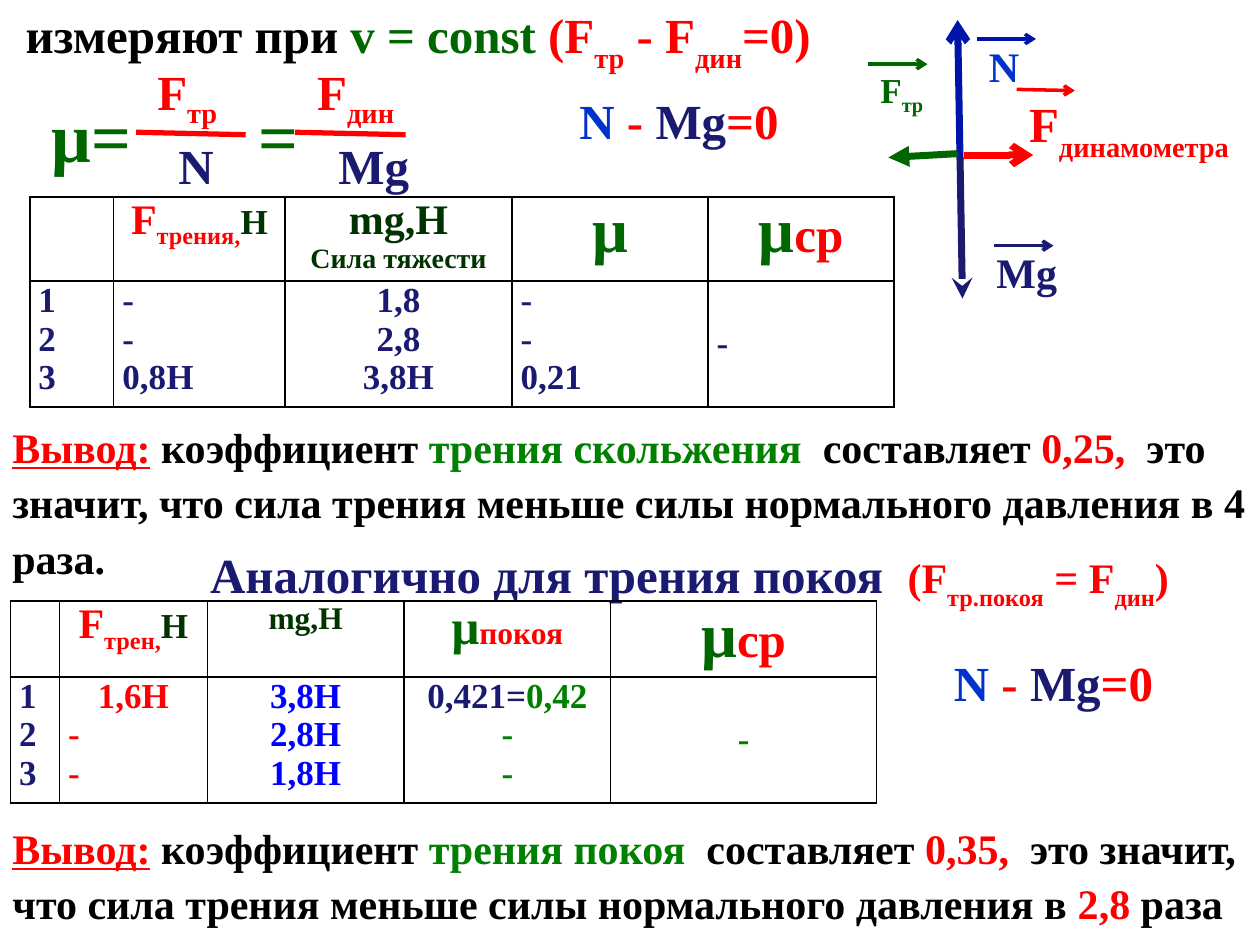
from lxml.etree import SubElement
from pptx import Presentation
from pptx.dml.color import RGBColor
from pptx.enum.shapes import MSO_CONNECTOR
from pptx.enum.text import MSO_ANCHOR, MSO_AUTO_SIZE, PP_ALIGN
from pptx.oxml.ns import qn
from pptx.util import Pt

BLACK = RGBColor(0, 0, 0)
RED = RGBColor(0xFF, 0, 0)
SCARLET = RGBColor(0xF9, 0x01, 0x01)
NAVY = RGBColor(0x1A, 0x1A, 0x70)
ROYAL = RGBColor(0, 0x14, 0xAC)
AZURE = RGBColor(0, 0x33, 0xCC)
BLUE = RGBColor(0, 0, 0xFF)
GREEN = RGBColor(0, 0x66, 0)
GRASS = RGBColor(0, 0x80, 0)
PINE = RGBColor(0, 0x33, 0)
LEFT, MID = PP_ALIGN.LEFT, PP_ALIGN.CENTER


def write(frame, *lines, size=28, align=LEFT, anchor=MSO_ANCHOR.TOP, drop=-30, gap=1.1):
    frame.word_wrap = True
    frame.vertical_anchor = anchor
    for i, line in enumerate(lines):
        para = frame.add_paragraph() if i else frame.paragraphs[0]
        para.alignment = align
        para.line_spacing = gap
        for text, color, *own in line:
            run = para.add_run()
            run.text = text.removeprefix("_")
            font = run.font
            font.name, font.bold = "Times New Roman", True
            font.size = Pt(own[0] if own else size)
            font.color.rgb = color
            if text.startswith("_"):
                run._r.get_or_add_rPr().set("baseline", str(drop * 1000))


deck = Presentation()
deck.slide_width, deck.slide_height = Pt(720), Pt(540)
slide = deck.slides.add_slide(deck.slide_layouts[5])
shapes = slide.shapes

title = shapes.title
title.left, title.top, title.width, title.height = Pt(0), Pt(0), Pt(478), Pt(41)
title.text_frame.auto_size = MSO_AUTO_SIZE.NONE
write(title.text_frame,
      [("измеряют при ", BLACK), ("v = const ", GREEN), ("(F", RED), ("_тр", RED),
       (" - F", RED), ("_дин", RED), ("=0)", RED)],
      align=MID, anchor=MSO_ANCHOR.MIDDLE)

arrows = [
    (550.8, 88.6, 590.4, 88.6, RED, 4, "tailEnd", "arrow"),
    (548.6, 91.4, 547.2, 11.5, ROYAL, 4, "tailEnd", "arrow"),
    (507.6, 90, 547.2, 87.8, GREEN, 4, "headEnd", "triangle"),
    (550, 170.6, 548.6, 90, NAVY, 4, "headEnd", "stealth"),
    (568, 140.4, 602, 140.4, NAVY, 2, "tailEnd", "arrow"),
    (558, 22.3, 592, 22.3, ROYAL, 2, "tailEnd", "arrow"),
    (496, 36.7, 530, 36.7, GREEN, 2, "tailEnd", "arrow"),
    (581, 51.1, 614.2, 51.8, SCARLET, 2, "tailEnd", "arrow"),
    (77.8, 75.6, 140.4, 77, RED, 3, None, None),
    (168.5, 75.6, 231.8, 77, RED, 3, None, None),
]
for x, y, x2, y2, color, width, end, kind in arrows:
    line = shapes.add_connector(MSO_CONNECTOR.STRAIGHT, Pt(x), Pt(y), Pt(x2), Pt(y2))
    line.line.color.rgb = color
    line.line.width = Pt(width)
    if end:
        SubElement(line.line._get_or_add_ln(), qn("a:" + end), type=kind)
    SubElement(line._element.spPr, qn("a:effectLst"))

balance = [("N", AZURE), (" - ", RED), ("Mg", NAVY), ("=0", RED)]
labels = [
    (562.3, 134.6, 56, 36, [("Mg", NAVY)], 24, LEFT, -25),
    (558, 16.6, 56, 36, [("N", AZURE)], 24, LEFT, -25),
    (496, 33.1, 45.4, 32, [("F", GREEN), ("_тр", GREEN)], 20, LEFT, -25),
    (581, 46, 139, 41, [("F", RED), ("_динамометра", RED)], 28, LEFT, -30),
    (82.8, 28, 79, 48, [("F", RED), ("_тр", RED)], 28, LEFT, -25),
    (94.8, 70.6, 63, 48, [("N", NAVY)], 28, LEFT, -25),
    (174.2, 28, 79, 48, [("F", RED), ("_дин", RED)], 28, LEFT, -25),
    (186.3, 70.6, 63, 48, [("Mg", NAVY)], 28, LEFT, -25),
    (22.3, 44.6, 61.2, 55.4, [("μ=", GREEN)], 40, LEFT, -25),
    (140.4, 44.6, 37.5, 55.4, [("=", GREEN)], 40, LEFT, -25),
    (298, 44.6, 180, 41, balance, 28, MID, -25),
    (512, 365.8, 180, 41, balance, 28, MID, -25),
    (68, 303.8, 652, 41,
     [("Аналогично для трения покоя  ", NAVY, 28), ("(F", RED), ("_тр.покоя", RED),
      (" = F", RED), ("_дин", RED), (")", RED)], 24, MID, -30),
]
for x, y, w, h, runs, size, align, drop in labels:
    box = shapes.add_textbox(Pt(x), Pt(y), Pt(w), Pt(h))
    write(box.text_frame, runs, size=size, align=align, drop=drop)

ends = [
    (238.3, 94.3, "трения скольжения  ", "0,25,  ",
     [("это значит, что сила трения меньше силы нормального давления в 4 раза.", BLACK)]),
    (465.8, 65.5, "трения покоя  ", "0,35,  ",
     [("это значит, что сила трения меньше силы нормального давления в ", BLACK),
      ("2,8", RED), (" раза", BLACK)]),
]
for y, h, kind, value, rest in ends:
    box = shapes.add_textbox(Pt(0), Pt(y), Pt(720), Pt(h))
    write(box.text_frame,
          [("Вывод:", RED), (" ", RED), ("коэффициент ", BLACK), (kind, GRASS),
           ("составляет ", BLACK), (value, SCARLET), *rest],
          size=24, anchor=MSO_ANCHOR.MIDDLE)
    box.text_frame.paragraphs[0].runs[0].font.underline = True

mean = [("μ", GREEN, 36), ("ср", RED, 28)]
count = [[(n, NAVY)] for n in "123"]
sheets = [
    (17, 112.5, [48, 98, 129.5, 112, 106.5], 48,
     [[], [[("F", RED, 24), ("_трения,", RED, 24), ("Н", PINE)]],
      [[("mg,Н", PINE, 24)], [("Сила тяжести", PINE, 16)]],
      [[("μ", GREEN, 36)]], [mean]],
     [count, [[(t, NAVY)] for t in ("-", "-", "0,8Н")],
      [[(t, NAVY)] for t in ("1,8", "2,8", "3,8Н")],
      [[(t, NAVY)] for t in ("-", "-", "0,21")], [[("-", NAVY)]]],
     [LEFT, LEFT, MID, LEFT, LEFT]),
    (6, 343.5, [28, 84.5, 112.5, 118, 152], 43,
     [[], [[("F", RED, 24), ("_трен,", RED, 24), ("Н", PINE)]],
      [[("mg,Н", PINE, 18)]],
      [[("μ", GREEN, 28), ("покоя", RED, 18)]], [mean]],
     [count, [[(t, RED)] for t in ("1,6Н", "-", "-")],
      [[(t, BLUE)] for t in ("3,8Н", "2,8Н", "1,8Н")],
      [[("0,421=", NAVY), ("0,42", GRASS)], [("-", GRASS)], [("-", GRASS)]],
      [[("-", GRASS)]]],
     [LEFT, LEFT, MID, MID, MID]),
]
for x, y, widths, top, head, body, aligns in sheets:
    table = shapes.add_table(2, 5, Pt(x), Pt(y), Pt(sum(widths)), Pt(top + 72)).table
    table.first_row = table.horz_banding = False
    table.rows[0].height, table.rows[1].height = Pt(top), Pt(72)
    for c, width in enumerate(widths):
        table.columns[c].width = Pt(width)
        for r, lines in enumerate((head[c], body[c])):
            cell = table.cell(r, c)
            cell.margin_left = cell.margin_right = Pt(5)
            cell.margin_top = cell.margin_bottom = Pt(0)
            write(cell.text_frame, *lines, size=20, drop=-25, gap=1.0,
                  align=aligns[c] if r else MID)
            cell.vertical_anchor = MSO_ANCHOR.MIDDLE if r and c == 4 else MSO_ANCHOR.TOP
            props = cell._tc.get_or_add_tcPr()
            for side in ("lnL", "lnR", "lnT", "lnB"):
                edge = SubElement(props, qn("a:" + side), w=str(Pt(1)))
                paint = SubElement(edge, qn("a:solidFill"))
                SubElement(paint, qn("a:srgbClr"), val=str(BLACK))
            cell.fill.background()
    if aligns[3] == MID:
        table.cell(1, 1).text_frame.paragraphs[0].alignment = MID

deck.save("out.pptx")
